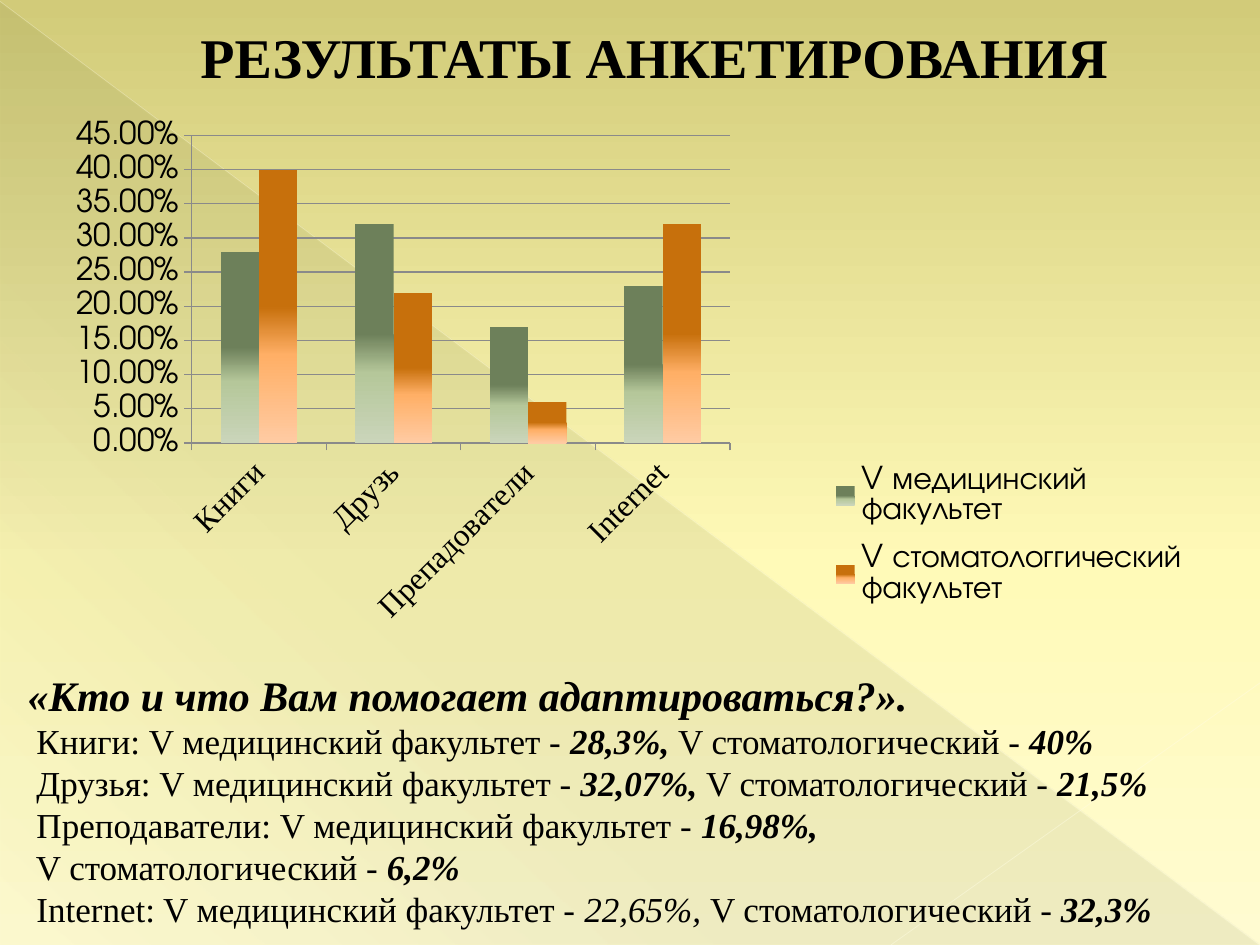
import pptx
import pptx.chart.data
import pptx.dml.color
import pptx.enum.chart
import pptx.enum.shapes
import pptx.enum.text
import pptx.oxml
import pptx.oxml.ns
import pptx.util
from pptx.util import Inches

RGBColor = pptx.dml.color.RGBColor
BLACK = RGBColor(0, 0, 0)
OLIVE = RGBColor(0x44, 0x4D, 0x26)
GRID = RGBColor(0x8A, 0x8A, 0x8A)
CREAM = RGBColor(0xFF, 0xFD, 0xE3)
BACKGROUND = [(0, RGBColor(0xD2, 0xCB, 0x79), 100),
              (60, RGBColor(0xFF, 0xFA, 0xB8), 100),
              (100, RGBColor(0xFF, 0xFB, 0xD1), 100)]
SHADE = [(0, OLIVE, 10), (70, OLIVE, 8), (100, OLIVE, 1)]
GREENS = (RGBColor(0x6D, 0x80, 0x5A), RGBColor(0xB5, 0xC7, 0x9A), RGBColor(0xCA, 0xD5, 0xBA))
ORANGES = (RGBColor(0xC7, 0x70, 0x0C), RGBColor(0xFF, 0xAF, 0x66), RGBColor(0xFF, 0xCB, 0xA3))
SERIF = "Times New Roman"
SANS = "TeX Gyre Adventor"

CATEGORIES = ["Книги", "Друзь", "Препадователи", "Internet"]
SERIES = [
    ("V медицинский факультет", (0.28, 0.32, 0.17, 0.23), GREENS),
    ("V стоматологгический факультет", (0.4, 0.22, 0.06, 0.32), ORANGES),
]
PLAIN = {"bold": False, "italic": False}
ITALIC = {"bold": False, "italic": True}
STRONG = {"bold": True, "italic": True}
MEDICAL = "V медицинский факультет - "
DENTAL = "V стоматологический - "
LEFT = pptx.enum.text.PP_ALIGN.LEFT
JUSTIFY = pptx.enum.text.PP_ALIGN.JUSTIFY
ANSWERS = [
    (LEFT, [("«Кто и что Вам помогает адаптироваться?».", STRONG)]),
    (LEFT, [(" Книги: " + MEDICAL, PLAIN), ("28,3%, ", STRONG),
            (DENTAL, PLAIN), ("40%", STRONG)]),
    (LEFT, [(" Друзья: " + MEDICAL, PLAIN), ("32,07%, ", STRONG),
            (DENTAL, PLAIN), ("21,5%", STRONG)]),
    (JUSTIFY, [(" Преподаватели: " + MEDICAL, PLAIN), ("16,98%,", STRONG)]),
    (LEFT, [(" " + DENTAL, PLAIN), ("6,2%", STRONG)]),
    (LEFT, [(" Internet: " + MEDICAL, PLAIN), ("22,65%, ", ITALIC),
            (DENTAL, PLAIN), ("32,3%", STRONG)]),
]


def apply_format(target, values):
    for name, value in values.items():
        setattr(target, name, value)


def format_font(font, name, size, **values):
    apply_format(font, {"name": name, "size": pptx.util.Pt(size), **values})
    font.color.rgb = BLACK


def place(shape, box):
    apply_format(shape, dict(zip(("left", "top", "width", "height"), box)))


def set_alpha(color_element, percent):
    alpha = pptx.oxml.ns.qn("a:alpha")
    color_element.append(color_element.makeelement(alpha, {"val": str(percent * 1000)}))


def set_gradient(fill, owner, stops, angle):
    fill.gradient()
    gradient = next(owner.iter(pptx.oxml.ns.qn("a:gradFill")))
    for child in list(gradient):
        gradient.remove(child)
    stop_xml = "".join(
        f'<a:gs pos="{position * 1000}"><a:srgbClr val="{color}">'
        f'<a:alpha val="{alpha * 1000}"/></a:srgbClr></a:gs>'
        for position, color, alpha in stops)
    namespace = pptx.oxml.ns.nsdecls("a")
    gradient.append(pptx.oxml.parse_xml(f"<a:gsLst {namespace}>{stop_xml}</a:gsLst>"))
    gradient.append(pptx.oxml.parse_xml(
        f'<a:lin {namespace} ang="{angle * 60000}" scaled="0"/>'))


def add_backdrop(slide, box):
    left, top, width, height = box
    right, bottom = left + width, top + height
    set_gradient(slide.background.fill, slide.element, BACKGROUND, 90)
    triangle = slide.shapes.add_shape(
        pptx.enum.shapes.MSO_SHAPE.RIGHT_TRIANGLE, left, top, width, height)
    triangle.shadow.inherit = False
    triangle.line.fill.background()
    set_gradient(triangle.fill, triangle.element, SHADE, 133)
    parts = [triangle]
    for start_x, start_y, end_x, end_y, weight, alpha in (
            (left, top, right, bottom, 0.39, 35),
            (right, top + Inches(5.41), left + Inches(7.07), bottom, 0.47, 45)):
        line = slide.shapes.add_connector(
            pptx.enum.shapes.MSO_CONNECTOR.STRAIGHT, start_x, start_y, end_x, end_y)
        line.line.width = pptx.util.Pt(weight)
        line.line.color.rgb = CREAM
        set_alpha(next(line.element.iter(pptx.oxml.ns.qn("a:srgbClr"))), alpha)
        properties = line.element.spPr
        properties.append(properties.makeelement(pptx.oxml.ns.qn("a:effectLst"), {}))
        parts.append(line)
    for index, part in enumerate(parts, start=2):
        slide.shapes.element.insert(index, part.element)


def add_layout(parent, successors, target, x, y, width, height):
    inner = '<c:layoutTarget val="inner"/>' if target else ""
    values = "".join(f'<c:{tag} val="{value}"/>' for tag, value in
                     (("xMode", "edge"), ("yMode", "edge"),
                      ("x", x), ("y", y), ("w", width), ("h", height)))
    for old in parent.findall(pptx.oxml.ns.qn("c:layout")):
        parent.remove(old)
    parent.insert_element_before(pptx.oxml.parse_xml(
        f'<c:layout {pptx.oxml.ns.nsdecls("c")}><c:manualLayout>{inner}{values}'
        '</c:manualLayout></c:layout>'), *successors)


def add_survey_chart(slide, box):
    data = pptx.chart.data.CategoryChartData(number_format="0.00%")
    data.categories = CATEGORIES
    for name, values, _ in SERIES:
        data.add_series(name, values)
    chart = slide.shapes.add_chart(
        pptx.enum.chart.XL_CHART_TYPE.COLUMN_CLUSTERED, *box, data).chart
    apply_format(chart, {"has_title": False, "has_legend": True})
    format_font(chart.font, SANS, 18)
    plot = chart.plots[0]
    apply_format(plot, {"gap_width": 150, "overlap": 0, "vary_by_categories": False})
    for series, (_, _, (dark, middle, light)) in zip(plot.series, SERIES):
        stops = [(0, dark, 100), (50, dark, 100), (68, middle, 100), (100, light, 100)]
        series.invert_if_negative = False
        set_gradient(series.format.fill, series._element, stops, 90)
    for axis, font in ((chart.category_axis, SERIF), (chart.value_axis, SANS)):
        axis.major_tick_mark = pptx.enum.chart.XL_TICK_MARK.OUTSIDE
        axis.format.line.color.rgb = GRID
        format_font(axis.tick_labels.font, font, 18)
    body = next(chart.category_axis._element.iter(pptx.oxml.ns.qn("a:bodyPr")))
    body.set("rot", str(-45 * 60000))
    value_axis = chart.value_axis
    apply_format(value_axis, {"minimum_scale": 0, "maximum_scale": 0.45, "major_unit": 0.05})
    apply_format(value_axis.tick_labels, {"number_format": "0.00%",
                                          "number_format_is_linked": False})
    value_axis.major_gridlines.format.line.color.rgb = GRID
    legend = chart.legend
    apply_format(legend, {"position": pptx.enum.chart.XL_LEGEND_POSITION.RIGHT,
                          "include_in_layout": False})
    format_font(legend.font, SANS, 18)
    add_layout(legend._element, ("c:overlay", "c:spPr", "c:txPr"), False, 0.65, 0.6, 0.32, 0.3)
    add_layout(chart._chartSpace.chart.plotArea, ("c:barChart",), True,
               0.124, 0.068, 0.452, 0.525)


def fill_title(slide, box):
    title = slide.shapes.title
    place(title, box)
    apply_format(title.text_frame, {"text": "РЕЗУЛЬТАТЫ АНКЕТИРОВАНИЯ", "word_wrap": True,
                                    "vertical_anchor": pptx.enum.text.MSO_ANCHOR.TOP})
    paragraph = title.text_frame.paragraphs[0]
    paragraph.alignment = pptx.enum.text.PP_ALIGN.CENTER
    paragraph._p.get_or_add_pPr().set("marL", str(Inches(0.53)))
    format_font(paragraph.runs[0].font, SERIF, 32, bold=True)


def fill_answers(slide, box):
    body = slide.placeholders[1]
    place(body, box)
    frame = body.text_frame
    apply_format(frame, {"word_wrap": True, "auto_size": pptx.enum.text.MSO_AUTO_SIZE.NONE})
    for index, (alignment, runs) in enumerate(ANSWERS):
        paragraph = frame.add_paragraph() if index else frame.paragraphs[0]
        apply_format(paragraph, {"alignment": alignment, "line_spacing": 1.0,
                                 "space_before": pptx.util.Pt(0)})
        properties = paragraph._p.get_or_add_pPr()
        properties.set("marL", "0")
        properties.set("indent", "0")
        properties.append(properties.makeelement(pptx.oxml.ns.qn("a:buNone"), {}))
        for text, style in runs:
            run = paragraph.add_run()
            run.text = text
            format_font(run.font, SERIF, 20 if index else 24, **style)


def main():
    presentation = pptx.Presentation()
    apply_format(presentation, {"slide_width": Inches(10), "slide_height": Inches(7.5)})
    slide = presentation.slides.add_slide(presentation.slide_layouts[1])
    add_backdrop(slide, (Inches(0), Inches(0.01), Inches(10), Inches(7.49)))
    add_survey_chart(slide, (Inches(0.35), Inches(0.76), Inches(9.45), Inches(4.65)))
    fill_answers(slide, (Inches(0.12), Inches(5.26), Inches(9.69), Inches(2.19)))
    fill_title(slide, (Inches(0.43), Inches(0.13), Inches(9), Inches(0.94)))
    presentation.save("out.pptx")


if __name__ == "__main__":
    main()
